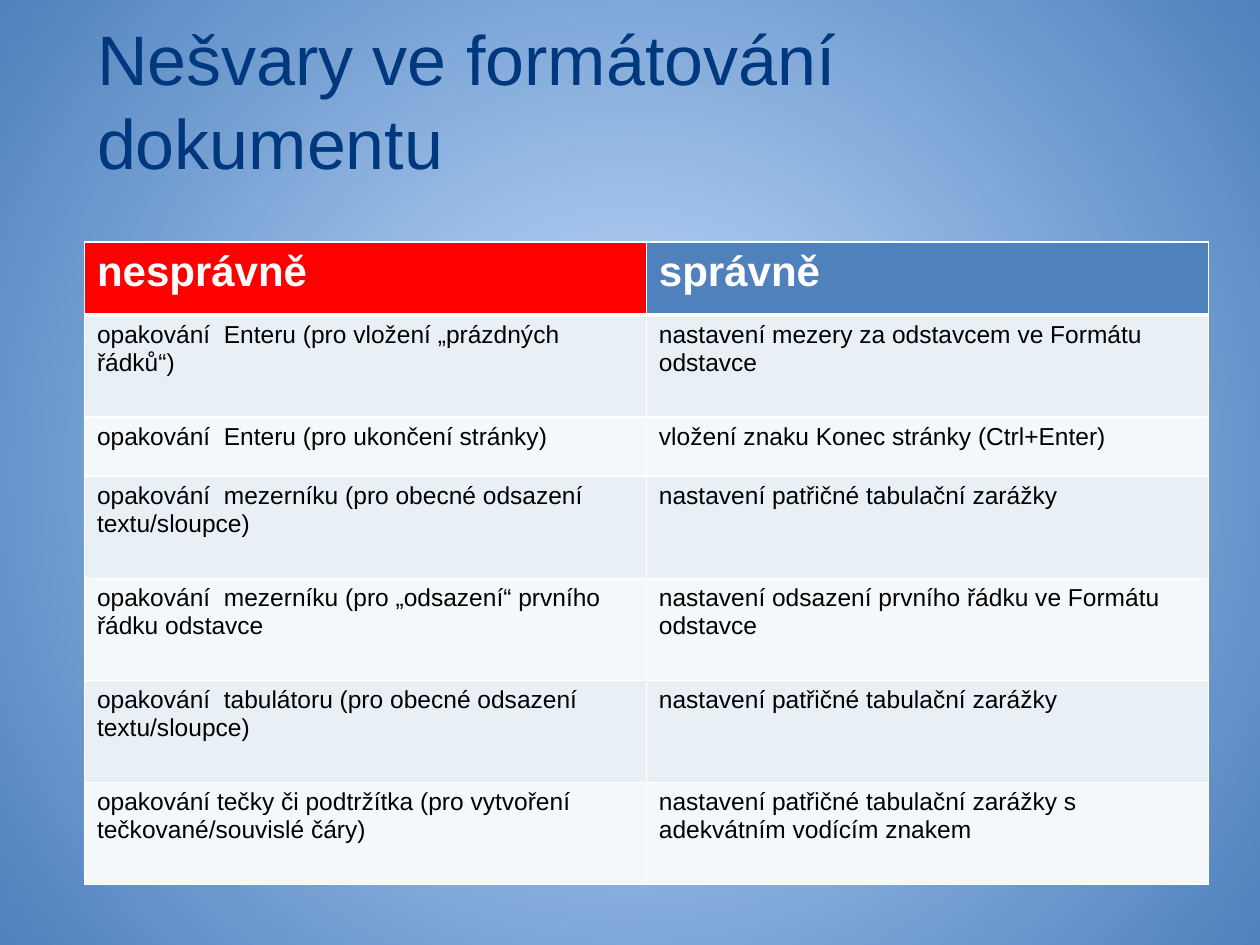
from pptx import Presentation
from pptx.dml.color import RGBColor
from pptx.enum.text import MSO_ANCHOR
from pptx.oxml import parse_xml
from pptx.oxml.ns import nsdecls, qn
from pptx.util import Inches, Pt

MIDDLE = MSO_ANCHOR.MIDDLE
FONT = "Arial"
COLORS = {
    "glow": "C6DFFF", "edge": "4F81BD", "title": "00387E",
    "wrong": "FF0000", "right": "4F81BD", "odd": "E9F0F5",
    "even": "F5F8FA", "white": "FFFFFF", "black": "000000",
}
HEADS = ("nesprávně", "správně")
ROWS = [
    ("opakování  Enteru (pro vložení „prázdných řádků“)",
     "nastavení mezery za odstavcem ve Formátu odstavce"),
    ("opakování  Enteru (pro ukončení stránky)",
     "vložení znaku Konec stránky (Ctrl+Enter)"),
    ("opakování  mezerníku (pro obecné odsazení textu/sloupce)",
     "nastavení patřičné tabulační zarážky"),
    ("opakování  mezerníku (pro „odsazení“ prvního řádku odstavce",
     "nastavení odsazení prvního řádku ve Formátu odstavce"),
    ("opakování  tabulátoru (pro obecné odsazení textu/sloupce)",
     "nastavení patřičné tabulační zarážky"),
    ("opakování tečky či podtržítka (pro vytvoření tečkované/souvislé čáry)",
     "nastavení patřičné tabulační zarážky s adekvátním vodícím znakem"),
]
HEIGHTS = [0.58, 0.81, 0.47] + [0.81] * 4


def rgb(name):
    return RGBColor.from_string(COLORS[name])


def style(frame, size, color, bold=False):
    for par in frame.paragraphs:
        for run in par.runs:
            font = run.font
            font.name, font.size, font.bold = FONT, Pt(size), bold
            font.color.rgb = rgb(color)


def add_glow(slide):
    fill = slide.background.fill
    fill.gradient()
    for stop, name, place in zip(fill.gradient_stops, ("glow", "edge"), (0, 1)):
        stop.color.rgb = rgb(name)
        stop.position = place
    # Turn the linear gradient into a circular one
    grad = slide.element.find(".//" + qn("a:gradFill"))
    grad.replace(grad.find(qn("a:lin")), parse_xml(
        f'<a:path {nsdecls("a")} path="circle">'
        '<a:fillToRect l="50000" t="50000" r="50000" b="50000"/></a:path>'))


def add_title(slide, left, top, width, height):
    title = slide.shapes.title
    title.left, title.top = Inches(left), Inches(top)
    title.width, title.height = Inches(width), Inches(height)
    frame = title.text_frame
    frame.text = "Nešvary ve formátování dokumentu"
    frame.word_wrap = True
    frame.vertical_anchor = MIDDLE
    frame.paragraphs[0].alignment = 1
    style(frame, 40, "title")


def add_edges(cell, top, bottom):
    props = cell._tc.get_or_add_tcPr()
    for side, points in (("L", 1), ("R", 1), ("T", top), ("B", bottom)):
        props.append(parse_xml(
            f'<a:ln{side} {nsdecls("a")} w="{Pt(points)}"><a:solidFill>'
            f'<a:srgbClr val="{COLORS["white"]}"/></a:solidFill></a:ln{side}>'))


def fill_cell(cell, text, back, size, color, bold):
    cell.fill.solid()
    cell.fill.fore_color.rgb = rgb(back)
    cell.text_frame.text = text
    style(cell.text_frame, size, color, bold)


def add_grid(slide, left, top, width):
    grid = slide.shapes.add_table(
        len(HEIGHTS), len(HEADS), Inches(left), Inches(top),
        Inches(width), Inches(sum(HEIGHTS))).table
    for row, height in zip(grid.rows, HEIGHTS):
        row.height = Inches(height)
    # Header row, with a thick rule under it
    for cell, text, back in zip(grid.rows[0].cells, HEADS, ("wrong", "right")):
        add_edges(cell, 1, 3)
        fill_cell(cell, text, back, 24, "white", True)
    # Banded body rows
    for num, texts in enumerate(ROWS, 1):
        back = "odd" if num % 2 else "even"
        for cell, text in zip(grid.rows[num].cells, texts):
            add_edges(cell, 3 if num == 1 else 1, 1)
            fill_cell(cell, text, back, 14, "black", False)


def main():
    deck = Presentation()
    deck.slide_width, deck.slide_height = Inches(10), Inches(7.5)
    slide = deck.slides.add_slide(deck.slide_layouts[5])
    add_glow(slide)
    add_title(slide, 0.67, 0.25, 8.9, 1.08)
    add_grid(slide, 0.67, 1.92, 8.92)
    deck.save("out.pptx")


if __name__ == "__main__":
    main()
